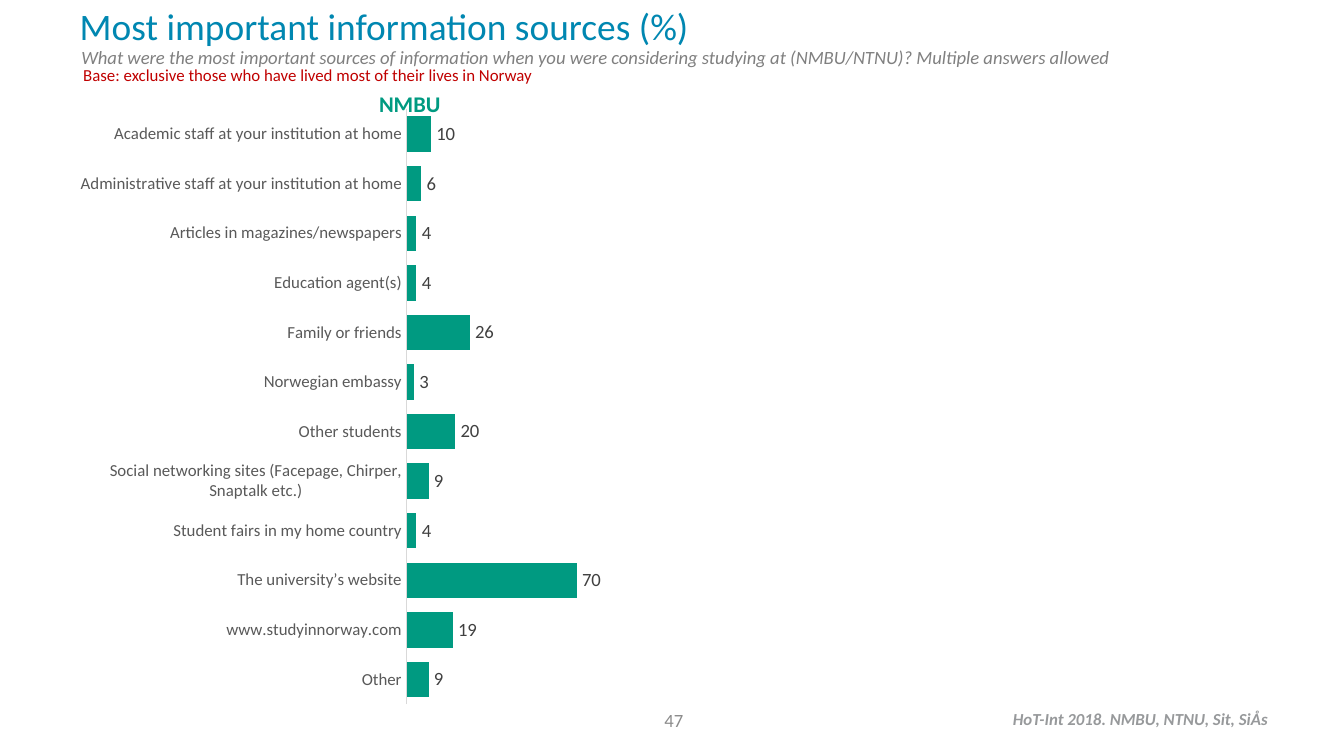
from lxml import etree
from pptx import Presentation
from pptx.chart import data as cd
from pptx.dml.color import RGBColor
from pptx.enum import chart as ch, text
from pptx.oxml import ns
from pptx.util import Pt

PX = 6350  # EMU per px, 144 px to the inch
FONT = "Calibri"
COLORS = {"title": "0087B1", "green": "009A81", "question": "808080",
          "base": "C00000", "footer": "97999B", "number": "8C8C8C",
          "category": "595959", "value": "404040", "axis": "D9D9D9",
          "black": "000000"}
SOURCES = {
    "Academic staff at your institution at home": 10,
    "Administrative staff at your institution at home": 6,
    "Articles in magazines/newspapers": 4,
    "Education agent(s)": 4,
    "Family or friends": 26,
    "Norwegian embassy": 3,
    "Other students": 20,
    "Social networking sites (Facepage, Chirper, Snaptalk etc.)": 9,
    "Student fairs in my home country": 4,
    "The university’s website": 70,
    "www.studyinnorway.com": 19,
    "Other": 9,
}


def rgb(name):
    return RGBColor.from_string(COLORS[name])


def emu(*lengths):
    return [n * PX for n in lengths]


def set_font(font, color, size, **style):
    font.color.rgb = rgb(color)
    for key, value in {"name": FONT, "size": Pt(size), **style}.items():
        setattr(font, key, value)


def write(sp, words, color, size, align=text.PP_ALIGN.LEFT,
          anchor=text.MSO_ANCHOR.TOP, wrap=True, **style):
    tf = sp.text_frame
    formats = {"auto_size": text.MSO_AUTO_SIZE.NONE, "word_wrap": wrap,
               "vertical_anchor": anchor}
    for key, value in formats.items():
        setattr(tf, key, value)
    p = tf.paragraphs[0]
    p.alignment = align
    r = p.add_run()
    r.text = words
    set_font(r.font, color, size, **style)


def add_label(s, x, y, w, h, *args, **kwargs):
    write(s.shapes.add_textbox(*emu(x, y, w, h)), *args, **kwargs)


def add_header(s, x, y):
    title = s.shapes.title
    title.left, title.top, title.width, title.height = emu(x, y, 740, 79)
    write(title, "Most important information sources (%)", "title", 20,
          anchor=text.MSO_ANCHOR.MIDDLE)
    add_label(s, x + 2, y + 54, 1148, 39,
              "What were the most important sources of information when you were "
              "considering studying at (NMBU/NTNU)? Multiple answers allowed",
              "question", 10, italic=True)
    add_label(s, x + 4, y + 74, 513, 36,
              "Base: exclusive those who have lived most of their lives in Norway",
              "base", 9, wrap=False)


def set_plot_area(chart, **box):
    """Fix the inner plot area, as fractions of the chart."""
    area = chart._chartSpace.chart.plotArea
    for old in area.findall(ns.qn("c:layout")):
        area.remove(old)
    layout = etree.Element(ns.qn("c:layout"))
    manual = etree.SubElement(layout, ns.qn("c:manualLayout"))
    values = {"layoutTarget": "inner", "xMode": "edge", "yMode": "edge", **box}
    for tag, value in values.items():
        etree.SubElement(manual, ns.qn("c:" + tag)).set("val", str(value))
    area.insert(0, layout)


def add_sources_chart(s, x, y, w, h):
    data = cd.CategoryChartData()
    data.categories = list(SOURCES)
    data.add_series("Series 1", list(SOURCES.values()))
    chart = s.shapes.add_chart(ch.XL_CHART_TYPE.BAR_CLUSTERED,
                               *emu(x, y, w, h), data).chart
    set_font(chart.font, "black", 10)
    chart.has_legend = chart.has_title = False
    set_plot_area(chart, x=0.57, y=0.02, w=0.41, h=0.96)

    # Axes
    cat, val = chart.category_axis, chart.value_axis
    cat.reverse_order = True
    cat.major_tick_mark = ch.XL_TICK_MARK.NONE
    cat.format.line.color.rgb = rgb("axis")
    cat.format.line.width = Pt(0.75)
    set_font(cat.tick_labels.font, "category", 9)
    formats = {"minimum_scale": 0, "maximum_scale": 100,
               "has_major_gridlines": False, "visible": False}
    for key, value in formats.items():
        setattr(val, key, value)

    # Bars and values
    plot = chart.plots[0]
    plot.gap_width = 40
    plot.vary_by_categories = False
    series = plot.series[0]
    series.format.fill.solid()
    series.format.fill.fore_color.rgb = rgb("green")
    labels = series.data_labels
    labels.show_value = True
    labels.position = ch.XL_LABEL_POSITION.OUTSIDE_END
    set_font(labels.font, "value", 10)

    # Institution heading over the bars
    add_label(s, x + 318, y - 15, 95, 43, "NMBU", "green", 12,
              wrap=False, bold=True)


def add_footer(s, x, y):
    add_label(s, x, y, 336, 43, "47", "number", 10,
              align=text.PP_ALIGN.CENTER, anchor=text.MSO_ANCHOR.MIDDLE)
    add_label(s, x + 517, y + 2, 307, 36, "HoT-Int 2018. NMBU, NTNU, Sit, SiÅs",
              "footer", 9, wrap=False, bold=True, italic=True)


def main():
    prs = Presentation()
    prs.slide_width, prs.slide_height = emu(1440, 810)
    s = prs.slides.add_slide(prs.slide_layouts[5])  # Title Only
    add_header(s, 71, -12)
    add_sources_chart(s, 74, 104, 635, 664)
    add_footer(s, 554, 750)
    prs.save("out.pptx")


if __name__ == "__main__":
    main()
